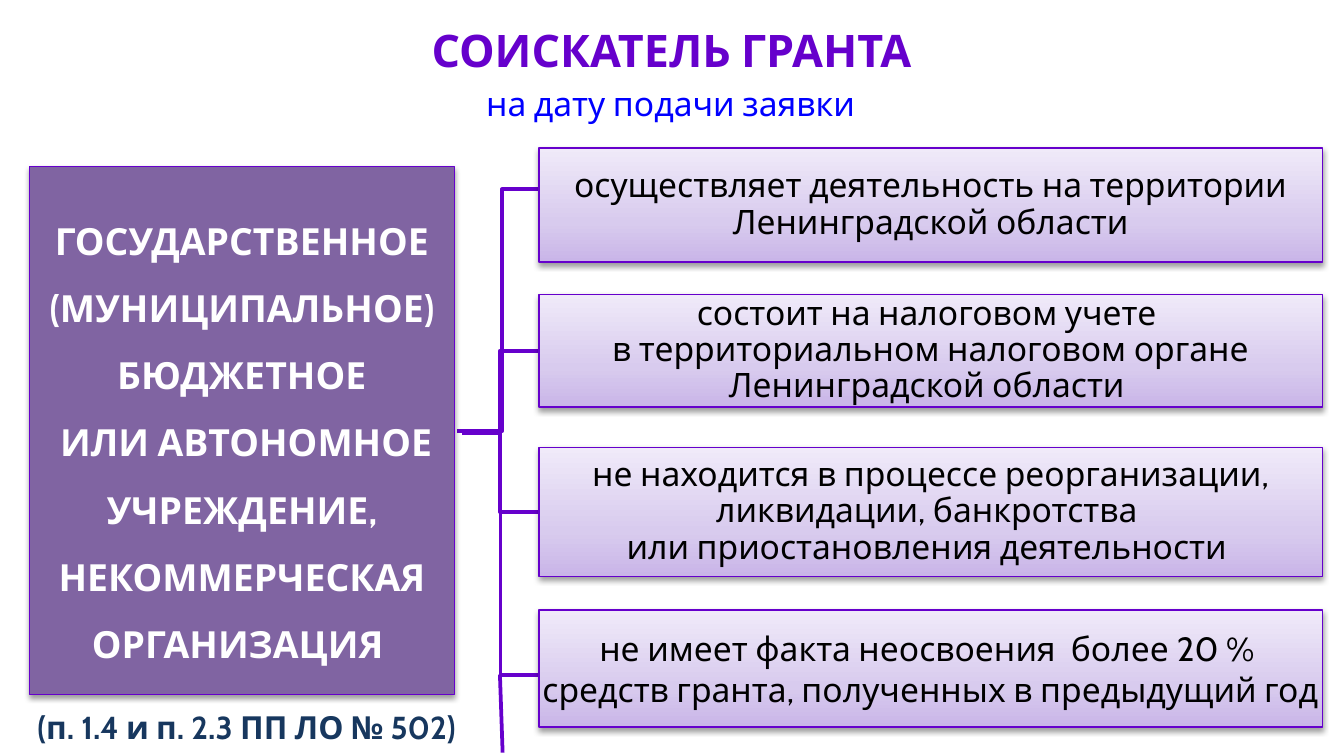
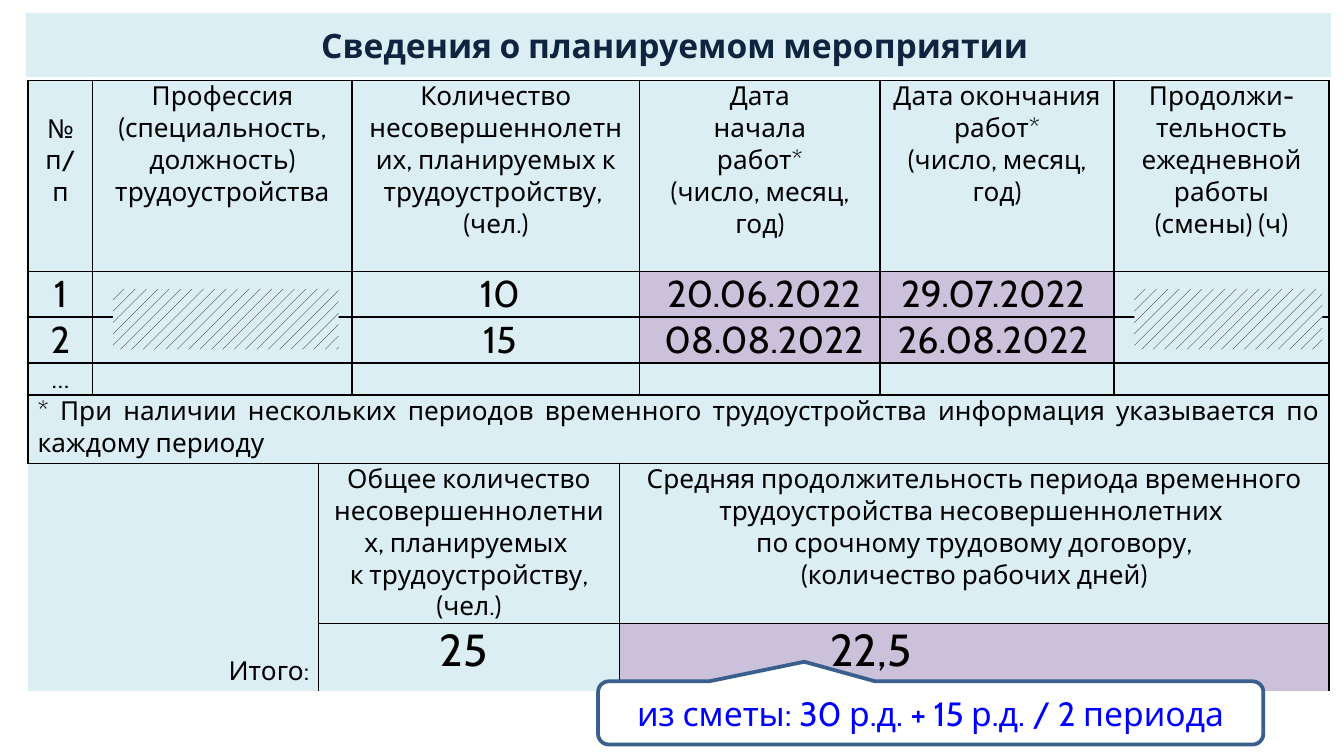
from lxml import etree
from pptx import Presentation
from pptx.dml.color import RGBColor
from pptx.enum import dml, shapes, text as text_enum
from pptx.oxml import parse_xml
from pptx.oxml.ns import nsdecls, qn
from pptx.util import Inches, Pt

FONT = "Cabin"
BLACK = RGBColor(0, 0, 0)
WHITE = RGBColor(0xFF, 0xFF, 0xFF)
VIOLET = RGBColor(0x66, 0x00, 0xCC)
PURPLE = RGBColor(0x80, 0x64, 0xA2)
LILAC = RGBColor(0xCC, 0xC1, 0xDA)
PALE_BLUE = RGBColor(0xDB, 0xEE, 0xF4)
BLUE = RGBColor(0x00, 0x00, 0xFF)
NAVY = RGBColor(0x17, 0x37, 0x5E)
DARK_NAVY = RGBColor(0x0F, 0x24, 0x3E)
STEEL = RGBColor(0x3A, 0x5F, 0x8C)
LILAC_GRADIENT = [(0, "C9B5E8"), (35, "D8CBEE"), (100, "F0EAF9")]

ALIGN = text_enum.PP_ALIGN
ANCHOR = text_enum.MSO_ANCHOR
SHAPE = shapes.MSO_SHAPE
CONNECTOR = shapes.MSO_CONNECTOR

BOX_X, BOX_WIDTH = 4.01, 5.83
# top, height, line spacing, text
CONDITIONS = [
    (1.1, 0.85, 0.9, "осуществляет деятельность на территории Ленинградской области"),
    (2.19, 0.84, 0.9, "состоит на налоговом учете \v"
     "в территориальном налоговом органе Ленинградской области "),
    (3.33, 0.96, 0.9, "не находится в процессе реорганизации, ликвидации, банкротства \v"
     "или приостановления деятельности "),
    (4.54, 0.87, 1, "не имеет факта неосвоения  более 20 % \n"
     "средств гранта, полученных в предыдущий год "),
]
# Start and end of each branch
BRANCHES = [
    ((3.44, 3.22), (4.01, 5.02)),
    ((3.43, 3.21), (4.01, 3.81)),
    ((3.4, 3.21), (4.04, 2.61)),
    ((3.43, 3.21), (4.04, 1.41)),
]

COLUMN_WIDTHS = [0.48, 1.68, 0.25, 1.99, 0.15, 1.79, 1.74, 1.6]
ROW_HEIGHTS = [1.42, 0.34, 0.34, 0.24, 0.51, 1.19, 0.5]
# First column and column span of each visible cell in the upper rows
UPPER_SPANS = [(0, 1), (1, 2), (3, 2), (5, 1), (6, 1), (7, 1)]
HEADINGS = [
    "№\nп/п",
    "Профессия (специальность, должность)\nтрудоустройства",
    "Количество несовершеннолетних, планируемых к трудоустройству, \n(чел.)",
    "Дата\nначала\nработ*\n(число, месяц, год)",
    "Дата окончания работ*\n(число, месяц, год)",
    "Продолжи-тельность ежедневной работы (смены) (ч)",
]
PERIODS = [
    ["1", "", "10", "20.06.2022", "29.07.2022", ""],
    ["2", "", "15", "08.08.2022", "26.08.2022", ""],
]
# Left and right cell margins that shift the values off centre
VALUE_MARGINS = {3: (0.13, 0.07), 5: (0.13, 0.07), 6: (0.07, 0.13)}


def write_text(frame, text, *, size=14, color=BLACK, bold=False, align=ALIGN.CENTER,
               anchor=ANCHOR.TOP, spacing=None):
    """Fill a text frame; each line of the text is a paragraph."""
    frame.word_wrap = True
    frame.vertical_anchor = anchor
    for index, line in enumerate(text.split("\n")):
        paragraph = frame.add_paragraph() if index else frame.paragraphs[0]
        paragraph.text = line
        paragraph.alignment = align
        if spacing:
            paragraph.line_spacing = spacing
        for run in paragraph.runs:
            run.font.name = FONT
            run.font.size = Pt(size)
            run.font.bold = bold
            run.font.color.rgb = color
        if not line:
            etree.SubElement(paragraph._p, qn("a:endParaRPr"), sz=str(size * 100))


def add_block(slide, place, kind=SHAPE.RECTANGLE, fill=None, line=None, line_width=0.75,
              margin=None, text="", **text_format):
    """Add a preset shape with a plain fill, an outline and text."""
    shape = slide.shapes.add_shape(kind, *map(Inches, place))
    shape.shadow.inherit = False
    if fill is None:
        shape.fill.background()
    else:
        shape.fill.solid()
        shape.fill.fore_color.rgb = fill
    if line is None:
        shape.line.fill.background()
    else:
        shape.line.color.rgb = line
        shape.line.width = Pt(line_width)
    if margin is not None:
        frame = shape.text_frame
        frame.margin_left = frame.margin_right = Inches(margin)
        frame.margin_top = frame.margin_bottom = Inches(margin)
    if text:
        write_text(shape.text_frame, text, **text_format)
    return shape


def add_soft_shadow(shape):
    effects = shape._element.spPr.find(qn("a:effectLst"))
    effects.append(parse_xml(
        f'<a:outerShdw {nsdecls("a")} blurRad="{Pt(3.1)}" dist="{Pt(1.6)}" dir="5400000" '
        'rotWithShape="0"><a:srgbClr val="000000"><a:alpha val="38000"/></a:srgbClr>'
        '</a:outerShdw>'))


def set_gradient(shape, stops):
    """Replace the empty fill with a gradient that runs from bottom to top."""
    stop_xml = "".join(f'<a:gs pos="{position * 1000}"><a:srgbClr val="{color}"/></a:gs>'
                       for position, color in stops)
    properties = shape._element.spPr
    properties.replace(properties.find(qn("a:noFill")), parse_xml(
        f'<a:gradFill {nsdecls("a")} rotWithShape="1"><a:gsLst>{stop_xml}</a:gsLst>'
        '<a:lin ang="16200000" scaled="0"/></a:gradFill>'))


def add_line(slide, start, end, kind=CONNECTOR.STRAIGHT):
    connector = slide.shapes.add_connector(kind, *map(Inches, (*start, *end)))
    connector.line.color.rgb = VIOLET
    connector.line.width = Pt(2)
    etree.SubElement(connector._element.spPr, qn("a:effectLst"))


def add_hatching(slide, left, width):
    """Cover the cells that need no entry."""
    shape = add_block(slide, (left, 2.15, width, 0.45))
    shape.fill.patterned()
    shape.fill.pattern = dml.MSO_PATTERN.DASHED_UPWARD_DIAGONAL
    shape.fill.fore_color.rgb = BLACK
    shape.fill.back_color.rgb = PALE_BLUE


def set_borders(cell, sides):
    properties = cell._tc.get_or_add_tcPr()
    for side in "LRTB":
        border = etree.SubElement(properties, qn(f"a:ln{side}"), w=str(Pt(1)))
        if side in sides:
            fill = etree.SubElement(border, qn("a:solidFill"))
            etree.SubElement(fill, qn("a:srgbClr"), val=str(BLACK))
        else:
            etree.SubElement(border, qn("a:noFill"))


def fill_cell(table, row, column, span=1, text="", *, rows=1, fill=PALE_BLUE,
              sides="LRTB", margins=(0.07, 0.07), top=0, bottom=0,
              anchor=ANCHOR.TOP, **text_format):
    """Merge, border, colour and fill one visible cell."""
    cell = table.cell(row, column)
    if span > 1 or rows > 1:
        cell.merge(table.cell(row + rows - 1, column + span - 1))
    for covered_row in range(row, row + rows):
        for covered_column in range(column, column + span):
            covered = table.cell(covered_row, covered_column)
            set_borders(covered, sides)
            covered.fill.solid()
            covered.fill.fore_color.rgb = fill
    cell.margin_left, cell.margin_right = map(Inches, margins)
    cell.margin_top, cell.margin_bottom = Inches(top), Inches(bottom)
    write_text(cell.text_frame, text, **text_format)
    cell.vertical_anchor = anchor


def add_event_table(slide):
    frame = slide.shapes.add_table(
        len(ROW_HEIGHTS), len(COLUMN_WIDTHS), Inches(0.21), Inches(0.6),
        Inches(sum(COLUMN_WIDTHS)), Inches(sum(ROW_HEIGHTS)))
    table = frame.table
    table.first_row = table.horz_banding = False
    for column, width in zip(table.columns, COLUMN_WIDTHS):
        column.width = Inches(width)
    for row, height in zip(table.rows, ROW_HEIGHTS):
        row.height = Inches(height)

    # Headings, periods and the row left open
    for (column, span), heading in zip(UPPER_SPANS, HEADINGS):
        fill_cell(table, 0, column, span, heading, top=0 if column else 0.24)
    for row, period in enumerate(PERIODS, start=1):
        for (column, span), value in zip(UPPER_SPANS, period):
            fill_cell(table, row, column, span, value, size=20 if value else 14,
                      fill=LILAC if column in (5, 6) else PALE_BLUE,
                      margins=VALUE_MARGINS.get(column, (0.07, 0.07)))
    for column, span in UPPER_SPANS:
        fill_cell(table, 3, column, span, "" if column else "…")

    # Footnote
    fill_cell(table, 4, 0, 8, "* При наличии нескольких периодов временного трудоустройства "
              "информация указывается по каждому периоду ", align=ALIGN.JUSTIFY)

    # Totals
    fill_cell(table, 5, 0, 2, "Итого:", rows=2, sides="TR", bottom=0.03,
              align=ALIGN.RIGHT, anchor=ANCHOR.BOTTOM)
    fill_cell(table, 5, 2, 2, "Общее количество несовершеннолетних, планируемых \n"
              "к трудоустройству,\n(чел.)")
    fill_cell(table, 5, 4, 4, "Средняя продолжительность периода временного трудоустройства "
              "несовершеннолетних \nпо срочному трудовому договору,\n"
              "(количество рабочих дней)")
    fill_cell(table, 6, 2, 2, "25", size=24, sides="LTR", margins=(0.07, 0.15))
    fill_cell(table, 6, 4, 4, "22,5", size=24, sides="LTR", fill=LILAC,
              margins=(1.57, 0.07), align=ALIGN.LEFT)


def build_applicant_slide(slide):
    # Title and reference
    add_block(slide, (-0.34, 5.22, 4.35, 0.39), line=WHITE,
              text="(п. 1.4 и п. 2.3 ПП ЛО № 502)", size=17, color=NAVY, bold=True)
    add_block(slide, (2.9, 0.12, 4.19, 0.5), line=WHITE, line_width=0.5,
              text="СОИСКАТЕЛЬ ГРАНТА", size=24, color=VIOLET, bold=True)

    # Branches
    for start, end in BRANCHES:
        add_line(slide, start, end, CONNECTOR.ELBOW)

    # Applicant
    applicant = add_block(
        slide, (0.22, 1.24, 3.16, 3.93), fill=PURPLE, line=VIOLET, line_width=0.25,
        margin=0.01, text="ГОСУДАРСТВЕННОЕ (МУНИЦИПАЛЬНОЕ) БЮДЖЕТНОЕ\v ИЛИ АВТОНОМНОЕ "
        "УЧРЕЖДЕНИЕ, НЕКОММЕРЧЕСКАЯ ОРГАНИЗАЦИЯ ", size=20, color=WHITE, bold=True,
        anchor=ANCHOR.MIDDLE, spacing=1.5)
    add_soft_shadow(applicant)

    # Conditions
    for top, height, spacing, text in CONDITIONS:
        box = add_block(slide, (BOX_X, top, BOX_WIDTH, height), line=VIOLET, margin=0.01,
                        text=text, size=18, anchor=ANCHOR.MIDDLE, spacing=spacing)
        set_gradient(box, LILAC_GRADIENT)
        add_soft_shadow(box)

    # Subtitle and the branch that runs on
    add_block(slide, (3.09, 0.57, 3.8, 0.4), fill=WHITE, line=WHITE, line_width=2,
              text="на дату подачи заявки", size=18, color=BLUE)
    add_line(slide, (3.72, 5.02), (3.74, 5.6))


def build_event_slide(slide):
    add_block(slide, (0.18, 0.08, 9.74, 0.51), fill=PALE_BLUE, line=WHITE, line_width=2,
              text="Сведения о планируемом мероприятии ", size=18, color=DARK_NAVY,
              bold=True, anchor=ANCHOR.MIDDLE)
    add_event_table(slide)
    add_hatching(slide, 0.84, 1.68)
    callout = add_block(slide, (4.45, 5.07, 4.95, 0.47), SHAPE.ROUNDED_RECTANGULAR_CALLOUT,
                        fill=WHITE, line=STEEL, line_width=2,
                        text="из сметы: 30 р.д. + 15 р.д. / 2 периода", size=18,
                        color=BLUE, anchor=ANCHOR.MIDDLE)
    for index, value in enumerate((-0.19, -0.81, 0.17)):
        callout.adjustments[index] = value
    add_hatching(slide, 8.44, 1.4)


def main():
    presentation = Presentation()
    # Widescreen, 16 to 9
    presentation.slide_width = Inches(10)
    presentation.slide_height = Inches(10 * 9 / 16)
    blank = presentation.slide_layouts[6]
    for build in (build_applicant_slide, build_event_slide):
        build(presentation.slides.add_slide(blank))
    presentation.save("out.pptx")


if __name__ == "__main__":
    main()
